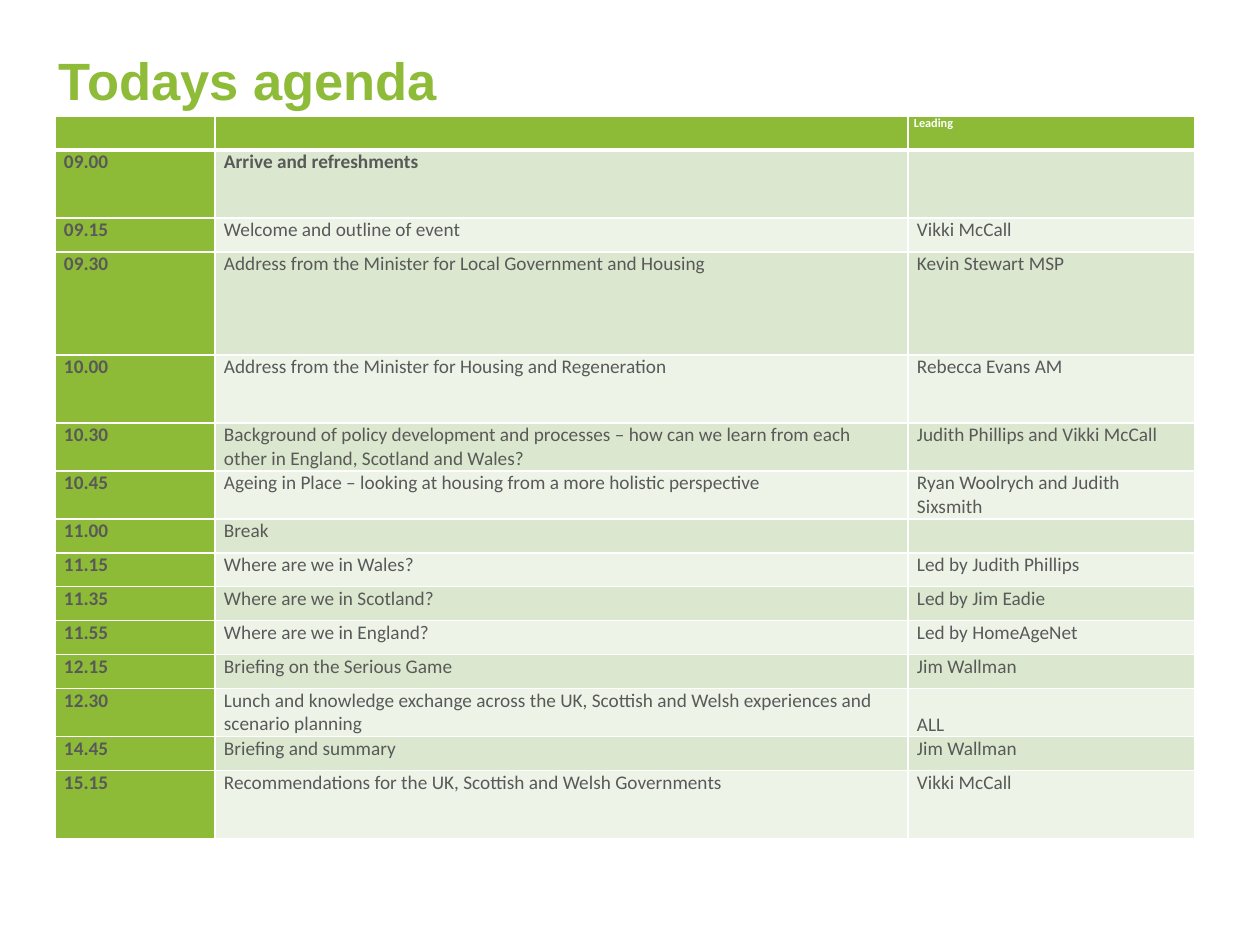
from lxml import etree
from pptx import Presentation
from pptx.dml.color import RGBColor
from pptx.enum.text import MSO_ANCHOR, PP_ALIGN
from pptx.oxml.ns import qn
from pptx.util import Emu, Pt

TOP, BOTTOM = MSO_ANCHOR.TOP, MSO_ANCHOR.BOTTOM
LEFT = PP_ALIGN.LEFT

TITLE_GREEN = RGBColor(0x8E, 0xBB, 0x38)
GREEN = RGBColor(0x8D, 0xBB, 0x37)
BAND_DARK = RGBColor(0xDB, 0xE7, 0xCE)
BAND_LIGHT = RGBColor(0xEE, 0xF3, 0xE8)
GREY = RGBColor(0x59, 0x59, 0x59)
WHITE = RGBColor(0xFF, 0xFF, 0xFF)

PX_PER_INCH = 126
COLUMN_WIDTHS = (160, 693, 287)
HEADER_HEIGHT = 34
HEADINGS = ("", "", "Leading")
AGENDA = (
    (68, "09.00", "Arrive and refreshments", ""),
    (34, "09.15", "Welcome and outline of event", "Vikki McCall"),
    (103, "09.30", "Address from the Minister for Local Government and Housing", "Kevin Stewart MSP"),
    (68, "10.00", "Address from the Minister for Housing and Regeneration", "Rebecca Evans AM"),
    (48, "10.30", "Background of policy development and processes – how can we learn from each "
                  "other in England, Scotland and Wales?", "Judith Phillips and Vikki McCall"),
    (48, "10.45", "Ageing in Place – looking at housing from a more holistic perspective",
     "Ryan Woolrych and Judith Sixsmith"),
    (34, "11.00", "Break", ""),
    (34, "11.15", "Where are we in Wales?", "Led by Judith Phillips"),
    (34, "11.35", "Where are we in Scotland?", "Led by Jim Eadie"),
    (34, "11.55", "Where are we in England?", "Led by HomeAgeNet"),
    (34, "12.15", "Briefing on the Serious Game", "Jim Wallman"),
    (48, "12.30", "Lunch and knowledge exchange across the UK, Scottish and Welsh experiences and "
                  "scenario planning", "ALL"),
    (34, "14.45", "Briefing and summary", "Jim Wallman"),
    (68, "15.15", "Recommendations for the UK, Scottish and Welsh Governments", "Vikki McCall"),
)


def px(length):
    return Emu(round(length * 914400 / PX_PER_INCH))


def write_text(frame, text, size, color, font="Calibri", bold=False, line_spacing=None):
    frame.word_wrap = True
    paragraph = frame.paragraphs[0]
    paragraph.alignment = LEFT
    if line_spacing:
        paragraph.line_spacing = Pt(line_spacing)
    if not text:
        paragraph._p.get_or_add_endParaRPr().set("sz", str(size * 100))
        return
    run = paragraph.add_run()
    run.text = text
    run.font.size = Pt(size)
    run.font.name = font
    run.font.bold = bold
    run.font.color.rgb = color


def add_borders(cell, **widths):
    properties = cell._tc.get_or_add_tcPr()
    for side in "LRTB":
        line = etree.SubElement(properties, qn(f"a:ln{side}"), w=str(Pt(widths.get(side, 1))))
        fill = etree.SubElement(line, qn("a:solidFill"))
        etree.SubElement(fill, qn("a:srgbClr"), val=str(WHITE))


def format_cell(cell, text, fill, inset=9, borders=None, **text_format):
    add_borders(cell, **(borders or {}))
    cell.fill.solid()
    cell.fill.fore_color.rgb = fill
    cell.margin_left = cell.margin_right = px(inset)
    cell.margin_top = cell.margin_bottom = 0
    cell.vertical_anchor = BOTTOM if text == "ALL" else TOP
    write_text(cell.text_frame, text, **text_format)


def place_title(slide, left, top, width, height):
    title = slide.shapes.title
    title.left, title.top, title.width, title.height = map(px, (left, top, width, height))
    frame = title.text_frame
    frame.margin_left = frame.margin_right = frame.margin_top = frame.margin_bottom = 0
    frame.vertical_anchor = TOP
    write_text(frame, "Todays agenda", size=30, color=TITLE_GREEN, font="Arial",
               bold=True, line_spacing=30)


def add_agenda(slide, left, top):
    heights = [HEADER_HEIGHT] + [entry[0] for entry in AGENDA]
    table = slide.shapes.add_table(len(heights), len(COLUMN_WIDTHS), px(left), px(top),
                                   px(sum(COLUMN_WIDTHS)), px(sum(heights))).table
    table.first_row = table.horz_banding = False
    for column, width in zip(table.columns, COLUMN_WIDTHS):
        column.width = px(width)
    for row, height in zip(table.rows, heights):
        row.height = px(height)
    for column, heading in enumerate(HEADINGS):
        format_cell(table.cell(0, column), heading, GREEN, inset=6, borders={"B": 3},
                    size=7, color=WHITE, bold=True)
    for row, (_, *entry) in enumerate(AGENDA, 1):
        band = BAND_DARK if row % 2 else BAND_LIGHT
        borders = {"T": 3} if row == 1 else None
        for column, text in enumerate(entry):
            format_cell(table.cell(row, column), text, band if column else GREEN,
                        borders=borders, size=11, color=GREY, bold=column == 0 or row == 1)


def main():
    presentation = Presentation()
    presentation.slide_width, presentation.slide_height = px(1260), px(945)
    slide = presentation.slides.add_slide(presentation.slide_layouts[5])
    place_title(slide, 59, 59, 1142, 184)
    add_agenda(slide, 55, 116)
    presentation.save("out.pptx")


if __name__ == "__main__":
    main()
